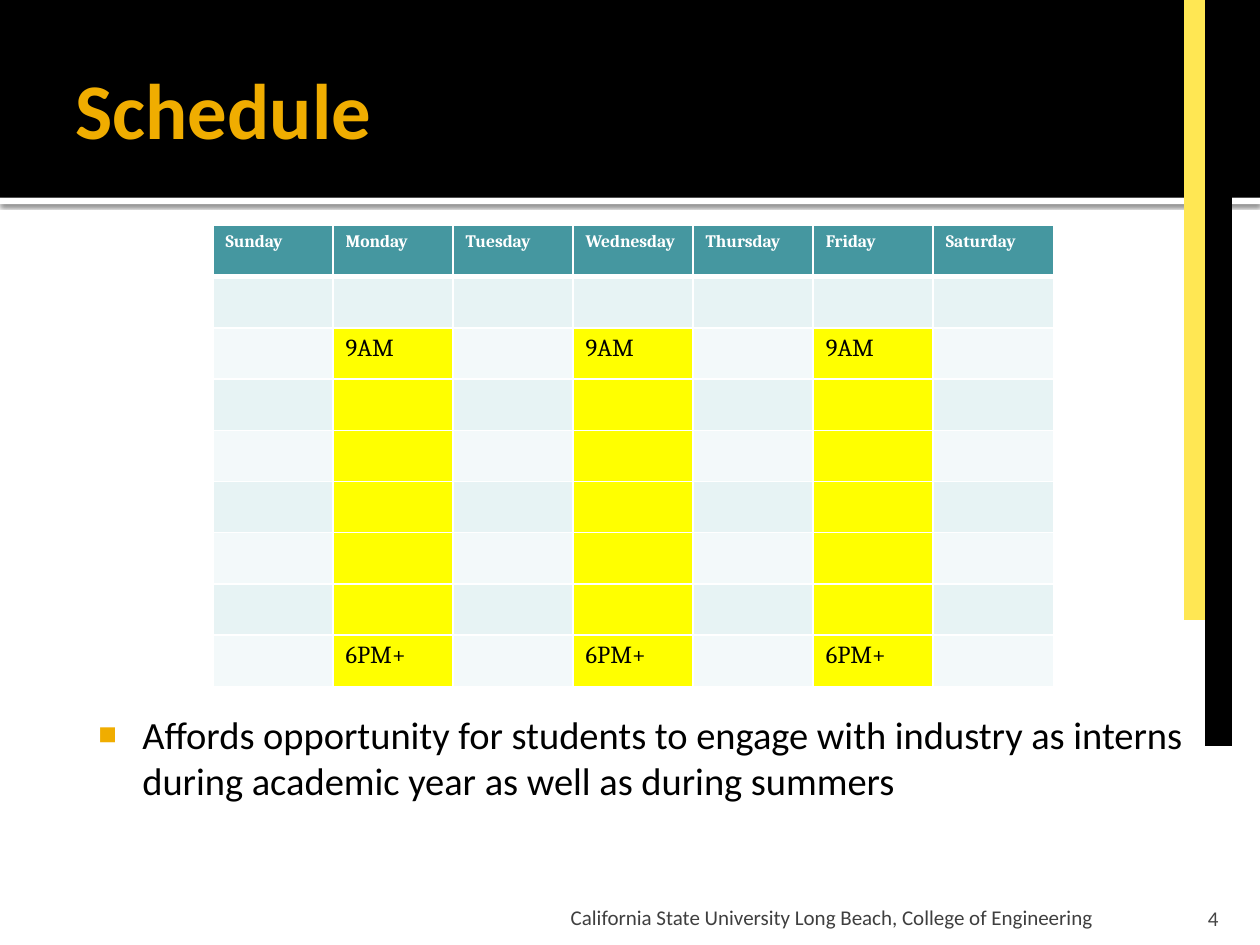
from dataclasses import dataclass

from lxml.etree import SubElement
from pptx import Presentation
from pptx.dml.color import RGBColor
from pptx.enum.shapes import MSO_CONNECTOR, MSO_SHAPE
from pptx.enum.text import MSO_ANCHOR, MSO_AUTO_SIZE, PP_ALIGN
from pptx.oxml.ns import qn
from pptx.util import Pt


@dataclass(frozen=True)
class Theme:
    sans: str = "Calibri"
    serif: str = "Cambria"
    black: str = "000000"
    white: str = "FFFFFF"
    gold: str = "F0AD00"
    stripe: str = "FFE753"
    header: str = "4597A0"
    bands: tuple = ("F3F9FA", "E7F3F4")
    busy: str = "FFFF00"
    footer: str = "3F3F3F"
    number: str = "454545"
    title_size: float = 45
    body_size: float = 22
    cell_size: float = 14
    header_size: float = 10
    footer_size: float = 12


THEME = Theme()
DAYS = ["Sunday", "Monday", "Tuesday", "Wednesday", "Thursday", "Friday", "Saturday"]
CLASS_DAYS = {"Monday", "Wednesday", "Friday"}
CLASS_ROWS = range(2, 9)
TIMES = {2: "9AM", 8: "6PM+"}


def add_xml(parent, tag, **attributes):
    return SubElement(parent, qn(tag), {name: str(value) for name, value in attributes.items()})


def place(shape, left, top, width, height):
    shape.left, shape.top = Pt(left), Pt(top)
    shape.width, shape.height = Pt(width), Pt(height)


def format_runs(paragraph, size, color, font=THEME.sans, bold=False):
    for run in paragraph.runs:
        run.font.name, run.font.size, run.font.bold = font, Pt(size), bold
        run.font.color.rgb = RGBColor.from_string(color)


def set_frame(shape, margins, anchor):
    frame = shape.text_frame
    frame.word_wrap = True
    frame.auto_size = MSO_AUTO_SIZE.NONE
    frame.vertical_anchor = anchor
    frame.margin_left, frame.margin_top, frame.margin_right, frame.margin_bottom = map(Pt, margins)
    return frame


def add_band(slide, top, height, color):
    band = slide.shapes.add_shape(MSO_SHAPE.RECTANGLE, 0, Pt(top), Pt(720), Pt(height))
    band.shadow.inherit = False
    band.fill.solid()
    band.fill.fore_color.rgb = RGBColor.from_string(color)
    band.line.fill.background()
    return band


def add_band_shadow(band):
    effects = band.element.spPr.find(qn("a:effectLst"))
    shadow = add_xml(effects, "a:outerShdw", blurRad=Pt(2.5), dist=Pt(0.8), dir=90 * 60000,
                     algn="tl", rotWithShape=0)
    color = add_xml(shadow, "a:srgbClr", val=THEME.black)
    add_xml(color, "a:alpha", val=60000)


def add_stripe(slide, x, bottom, color):
    stripe = slide.shapes.add_connector(MSO_CONNECTOR.STRAIGHT, Pt(x), 0, Pt(x), Pt(bottom))
    stripe.line.width = Pt(15)
    stripe.line.color.rgb = RGBColor.from_string(color)
    add_xml(stripe.element.spPr, "a:effectLst")


def add_label(slide, text, box, color, margins, alignment):
    label = slide.shapes.add_textbox(*map(Pt, box))
    frame = set_frame(label, margins, MSO_ANCHOR.BOTTOM)
    frame.text = text
    frame.paragraphs[0].alignment = alignment
    format_runs(frame.paragraphs[0], THEME.footer_size, color)


def fill_title(slide, text):
    title = slide.shapes.title
    place(title, 36, 12.24, 648, 98.64)
    frame = set_frame(title, (7.2, 3.6, 3.6, 3.6), MSO_ANCHOR.MIDDLE)
    frame.text = text
    frame.paragraphs[0].alignment = PP_ALIGN.LEFT
    format_runs(frame.paragraphs[0], THEME.title_size, THEME.gold, bold=True)
    bring_to_front(title)


def fill_body(slide, text):
    body = slide.placeholders[1]
    place(body, 42.48, 398.88, 647.28, 75.6)
    frame = set_frame(body, (4.32, 7.2, 7.2, 3.6), MSO_ANCHOR.TOP)
    frame.text = text
    paragraph = frame.paragraphs[0]
    properties = paragraph._p.get_or_add_pPr()
    properties.set("marL", str(Pt(34.56)))
    properties.set("indent", str(Pt(-25.2)))
    bullet_color = add_xml(properties, "a:buClr")
    add_xml(bullet_color, "a:srgbClr", val=THEME.gold)
    add_xml(properties, "a:buSzPct", val=80000)
    add_xml(properties, "a:buFont", typeface="Arial")
    add_xml(properties, "a:buChar", char="■")
    paragraph.space_before = Pt(0)
    format_runs(paragraph, THEME.body_size, THEME.black)
    bring_to_front(body)


def bring_to_front(shape):
    shape.element.getparent().append(shape.element)


def style_cell(cell, row, fill):
    properties = cell._tc.get_or_add_tcPr()
    # The rule between header and first row is heavier
    widths = {"L": 1, "R": 1, "T": 3 if row == 1 else 1, "B": 3 if row == 0 else 1}
    for side, width in widths.items():
        border = add_xml(properties, f"a:ln{side}", w=Pt(width))
        solid = add_xml(border, "a:solidFill")
        add_xml(solid, "a:srgbClr", val=THEME.white)
    cell.fill.solid()
    cell.fill.fore_color.rgb = RGBColor.from_string(fill)


def add_schedule(slide):
    row_count, row_height = 9, 29.28
    frame = slide.shapes.add_table(row_count, len(DAYS), Pt(121.68), Pt(128.88),
                                   Pt(480.2), Pt(row_count * row_height))
    table = frame.table
    for column in table.columns:
        column.width = Pt(68.6)
    for row_index, row in enumerate(table.rows):
        row.height = Pt(row_height)
        for day, cell in zip(DAYS, row.cells):
            is_header = row_index == 0
            is_class = day in CLASS_DAYS and row_index in CLASS_ROWS
            if is_header:
                text, fill = day, THEME.header
            elif is_class:
                text, fill = TIMES.get(row_index, ""), THEME.busy
            else:
                text, fill = "", THEME.bands[row_index % 2]
            style_cell(cell, row_index, fill)
            if text:
                cell.text_frame.text = text
                format_runs(cell.text_frame.paragraphs[0],
                            THEME.header_size if is_header else THEME.cell_size,
                            THEME.white if is_header else THEME.black,
                            THEME.serif, is_header)


def main():
    presentation = Presentation()
    presentation.slide_width, presentation.slide_height = Pt(720), Pt(540)
    slide = presentation.slides.add_slide(presentation.slide_layouts[1])

    # Header bands and side stripes
    add_band_shadow(add_band(slide, 113.04, 3.6, THEME.white))
    add_band(slide, 0, 113.04, THEME.black)
    add_stripe(slide, 684, 354.24, THEME.stripe)
    add_stripe(slide, 696.24, 426.24, THEME.black)

    # Footer, title and slide number
    add_label(slide, "California State University Long Beach, College of Engineering",
              (322.56, 509.76, 343.44, 21.6), THEME.footer, (3.6, 3.6, 3.6, 0), PP_ALIGN.LEFT)
    fill_title(slide, "Schedule")
    add_label(slide, "4", (635.76, 498.24, 67.68, 33.84), THEME.number,
              (7.2, 3.6, 7.2, 0), PP_ALIGN.RIGHT)

    # Weekly schedule and remark
    add_schedule(slide)
    fill_body(slide, "Affords opportunity for students to engage with industry as interns "
                     "during academic year as well as during summers")

    presentation.save("out.pptx")


if __name__ == "__main__":
    main()
